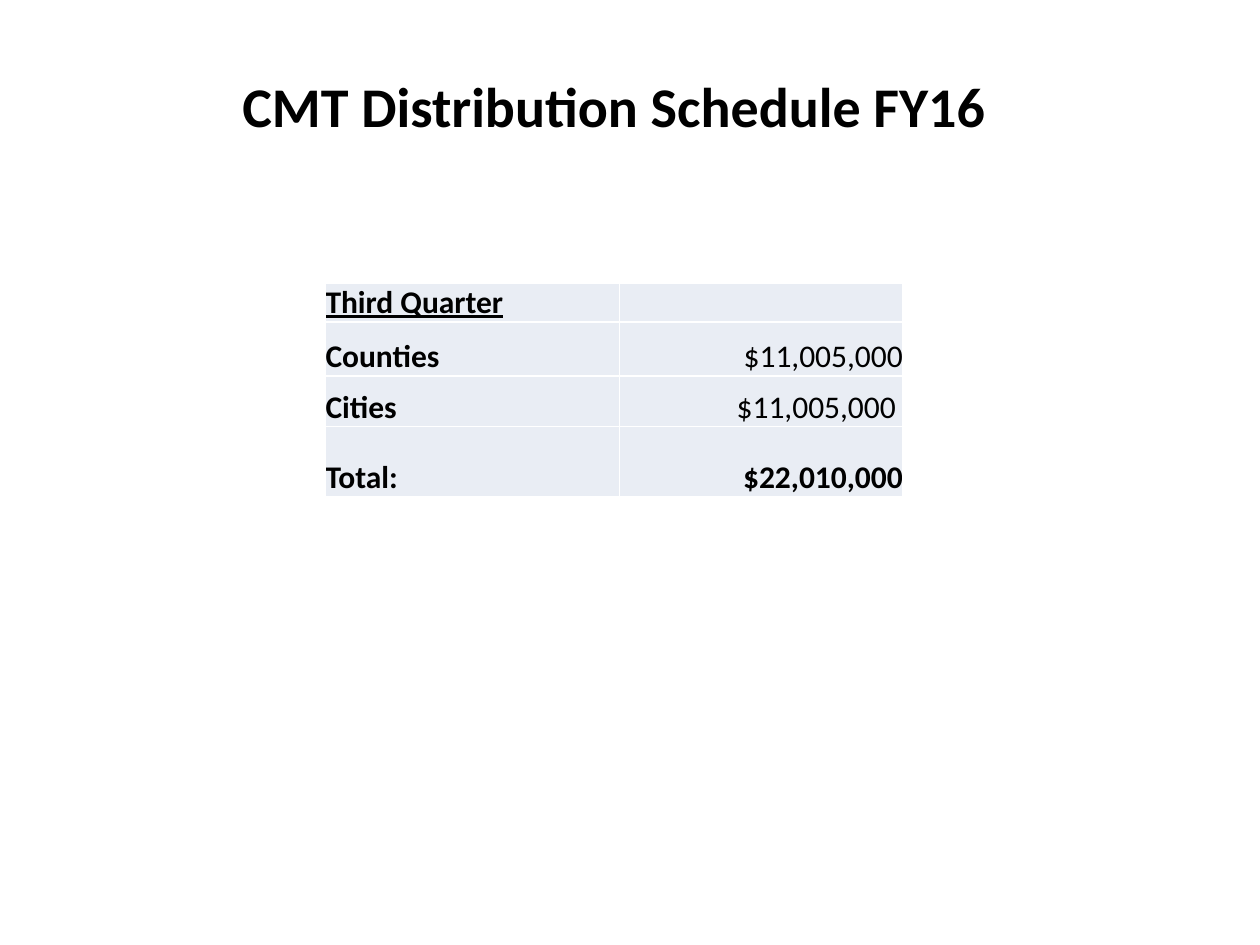
import dataclasses

import pptx
import pptx.dml.color
import pptx.enum.text
import pptx.oxml
import pptx.oxml.ns
import pptx.util

Pt = pptx.util.Pt
RGBColor = pptx.dml.color.RGBColor
ALIGN = pptx.enum.text.PP_ALIGN
ANCHOR = pptx.enum.text.MSO_ANCHOR

BLACK = RGBColor(0x00, 0x00, 0x00)
WHITE = RGBColor(0xFF, 0xFF, 0xFF)
PALE_BLUE = RGBColor(0xE9, 0xED, 0xF4)
FONT = "Calibri"


@dataclasses.dataclass
class ScheduleRow:
    label: str
    amount: str
    height: float
    underline: bool = False
    bold_amount: bool = False
    right_inset: float = 0


COLUMN_WIDTHS = (168, 162)
ROWS = (
    ScheduleRow("Third Quarter", "", 21.6, underline=True),
    ScheduleRow("Counties", "$11,005,000", 31),
    ScheduleRow("Cities", "$11,005,000", 28.8, right_inset=4),
    ScheduleRow("Total:", "$22,010,000", 40, bold_amount=True),
)


def write_text(tf, text: str, *, size: float = 18, bold: bool = True,
               underline: bool = False, align=ALIGN.LEFT) -> None:
    p = tf.paragraphs[0]
    p.alignment = align
    if not text:
        return
    r = p.add_run()
    r.text = text
    r.font.name = FONT
    r.font.size = Pt(size)
    r.font.bold = bold
    r.font.underline = underline
    r.font.color.rgb = BLACK


def style_cell(cell, right_inset: float = 0) -> None:
    cell.margin_left = cell.margin_top = cell.margin_bottom = 0
    cell.margin_right = Pt(right_inset)
    cell.vertical_anchor = ANCHOR.BOTTOM
    tc_pr = cell._tc.get_or_add_tcPr()
    for side in ("lnL", "lnR", "lnT", "lnB"):
        tc_pr.append(pptx.oxml.parse_xml(
            f'<a:{side} {pptx.oxml.ns.nsdecls("a")} w="{Pt(1)}">'
            f'<a:solidFill><a:srgbClr val="{WHITE}"/></a:solidFill></a:{side}>'))
    cell.fill.solid()
    cell.fill.fore_color.rgb = PALE_BLUE


def add_title(s, text: str) -> None:
    sp = s.shapes.title
    sp.left, sp.top, sp.width, sp.height = Pt(60), Pt(36), Pt(582), Pt(48)
    sp.text_frame.vertical_anchor = ANCHOR.MIDDLE
    write_text(sp.text_frame, text, size=32, align=ALIGN.CENTER)


def add_schedule(s) -> None:
    table = s.shapes.add_table(
        len(ROWS), len(COLUMN_WIDTHS), Pt(186), Pt(162),
        Pt(sum(COLUMN_WIDTHS)), Pt(sum(row.height for row in ROWS))).table
    for column, width in zip(table.columns, COLUMN_WIDTHS):
        column.width = Pt(width)
    for i, row in enumerate(ROWS):
        table.rows[i].height = Pt(row.height)
        label, amount = table.cell(i, 0), table.cell(i, 1)
        style_cell(label)
        style_cell(amount, row.right_inset)
        write_text(label.text_frame, row.label, underline=row.underline)
        write_text(amount.text_frame, row.amount, bold=row.bold_amount,
                   align=ALIGN.RIGHT)


def main() -> None:
    prs = pptx.Presentation()
    prs.slide_width, prs.slide_height = Pt(720), Pt(540)
    s = prs.slides.add_slide(prs.slide_layouts[5])
    add_title(s, "CMT Distribution Schedule FY16")
    add_schedule(s)
    prs.save("out.pptx")


if __name__ == "__main__":
    main()
